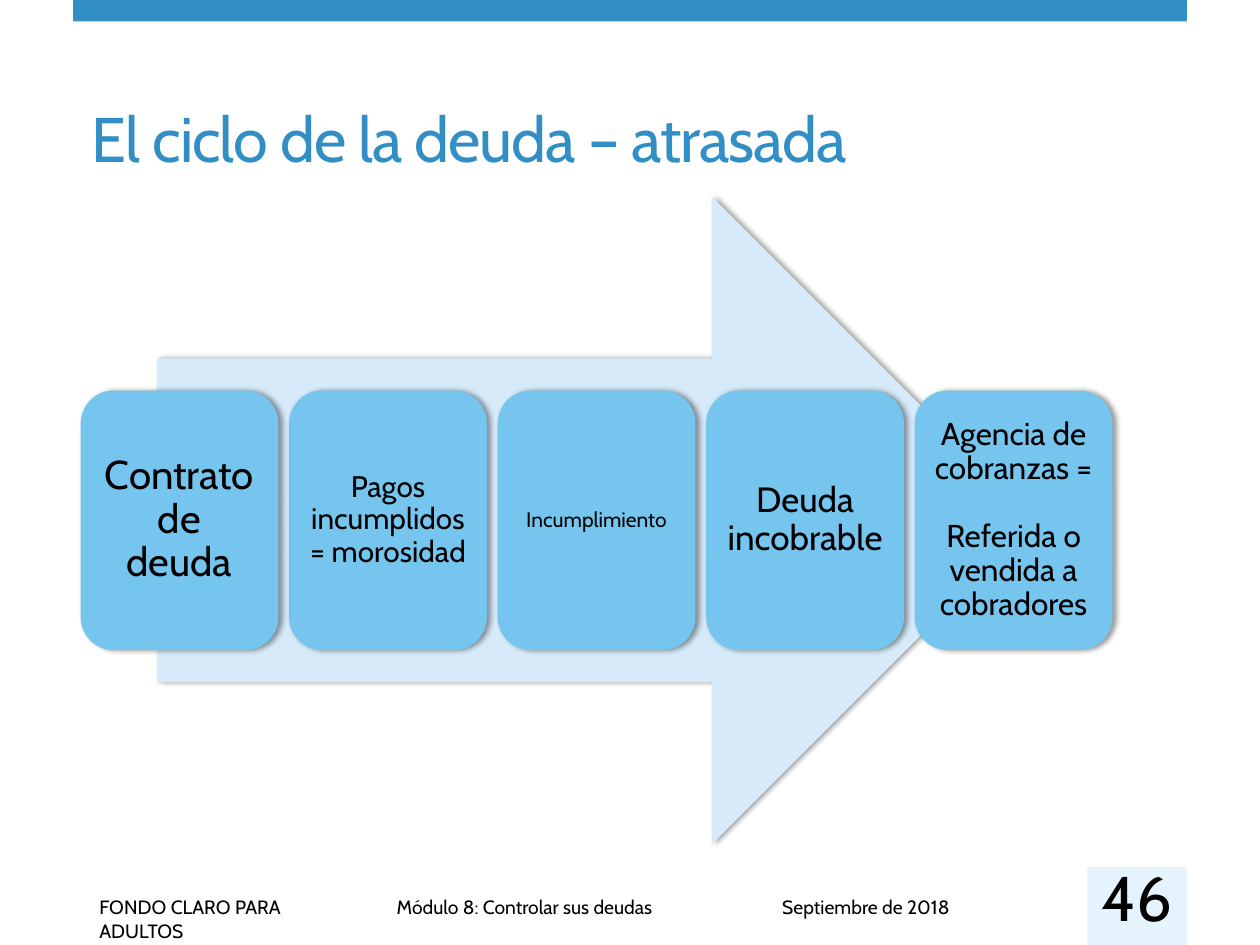
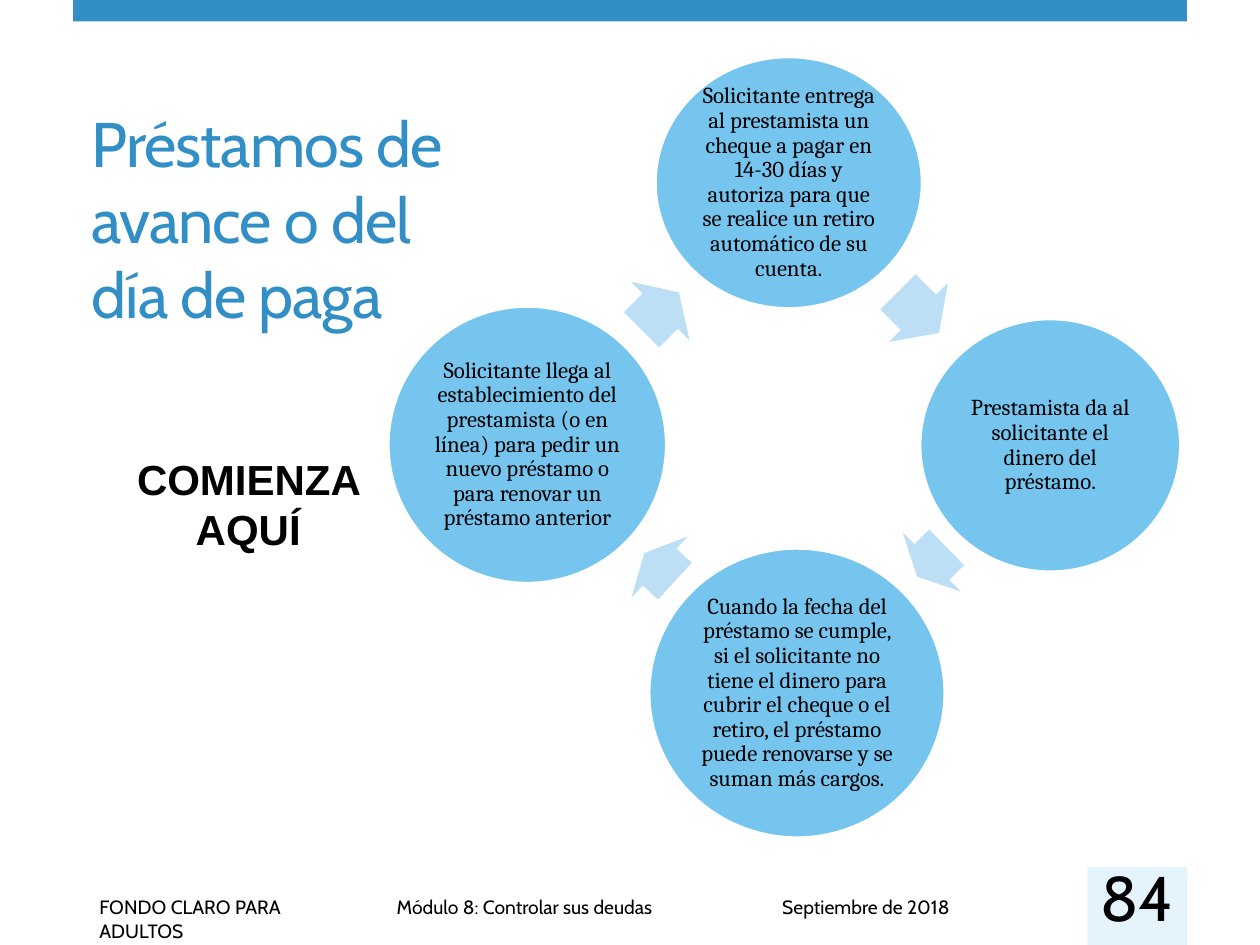
import pptx
import pptx.util
import pptx.dml.color
import pptx.enum.shapes
import pptx.enum.text
import pptx.oxml
import pptx.oxml.ns
from dataclasses import dataclass

Inches = pptx.util.Inches
Pt = pptx.util.Pt
Kind = pptx.enum.shapes.MSO_SHAPE
Align = pptx.enum.text.PP_ALIGN
Anchor = pptx.enum.text.MSO_ANCHOR


@dataclass(frozen=True)
class Theme:
    blue: str = "318FC5"
    sky: str = "76C5EF"
    pale: str = "D6EAF9"
    ice: str = "E4F3FC"
    mist: str = "BDDFF6"
    white: str = "FFFFFF"
    black: str = "000000"
    font: str = "Cabin"
    serif: str = "Cambria"
    sans: str = "Arial"
    title: int = 36
    start: int = 24
    note: int = 13
    foot: int = 11


SHADE = (
    '<a:effectLst xmlns:a="http://schemas.openxmlformats.org/drawingml/2006/main">'
    '<a:outerShdw blurRad="39370" dist="22860" dir="0" rotWithShape="0">'
    '<a:srgbClr val="000000"><a:alpha val="40000"/></a:srgbClr>'
    '</a:outerShdw></a:effectLst>'
)


def tint(code):
    return pptx.dml.color.RGBColor.from_string(code)


def put(shape, text, size, font=Theme.font, color=Theme.black, bold=False,
        align=Align.LEFT, anchor=Anchor.TOP, inset=None, lead=None, gap=0, track=None):
    frame = shape.text_frame
    frame.word_wrap = True
    frame.vertical_anchor = anchor
    if inset is not None:
        frame.margin_left = frame.margin_right = Inches(inset)
        frame.margin_top = frame.margin_bottom = Inches(inset)
    lines = text.split("\n")
    for i, line in enumerate(lines):
        para = frame.add_paragraph() if i else frame.paragraphs[0]
        para.alignment = align
        if lead:
            para.line_spacing = lead
        if i < len(lines) - 1:
            para.space_after = Pt(gap)
        run = para.add_run()
        run.text = line
        run.font.size = Pt(size)
        run.font.name = font
        run.font.bold = bold
        run.font.color.rgb = tint(color)
        if track:
            run.font._element.set("spc", str(track))


class Deck:
    def __init__(self, theme):
        self.theme = theme
        self.show = pptx.Presentation()
        self.show.slide_width = Inches(10)
        self.show.slide_height = Inches(7.5)
        self.slide = None

    def shape(self, kind, box, fill, edge=None, shade=False, turn=0):
        item = self.slide.shapes.add_shape(kind, *map(Inches, box))
        item.fill.solid()
        item.fill.fore_color.rgb = tint(fill)
        if edge:
            item.line.color.rgb = tint(edge)
            item.line.width = Pt(3.25)
        else:
            item.line.fill.background()
        item.shadow.inherit = False
        if shade:
            props = item._element.spPr
            props.remove(props.find(pptx.oxml.ns.qn("a:effectLst")))
            props.append(pptx.oxml.parse_xml(SHADE))
        item.rotation = turn
        return item

    def text(self, box, words, size, **style):
        put(self.slide.shapes.add_textbox(*map(Inches, box)), words, size, **style)

    def page(self, title, box, number):
        look = self.theme
        self.slide = self.show.slides.add_slide(self.show.slide_layouts[6])
        self.shape(Kind.RECTANGLE, (0.58, 0, 8.84, 0.17), look.blue)
        self.shape(Kind.RECTANGLE, (8.63, 6.88, 0.79, 0.62), look.ice)
        for left, wide, words in (
            (0.69, 2.23, "FONDO CLARO PARA ADULTOS"),
            (3.05, 3, "Módulo 8: Controlar sus deudas"),
            (6.11, 2.52, "Septiembre de 2018"),
        ):
            self.text((left, 7.06, wide, 0.29), words, look.foot)
        self.text((8.63, 6.96, 0.79, 0.31), number, look.title,
                  align=Align.CENTER, anchor=Anchor.MIDDLE, inset=0)
        self.text(box, title, look.title, color=look.blue,
                  anchor=Anchor.BOTTOM, track=-60)

    def card(self, left, words, size, inset):
        item = self.shape(Kind.ROUNDED_RECTANGLE, (left, 3.1, 1.57, 2.06),
                          self.theme.sky, shade=True)
        put(item, words, size, align=Align.CENTER, anchor=Anchor.MIDDLE,
            inset=inset, lead=0.9, gap=19.5)

    def disc(self, box, words):
        look = self.theme
        item = self.shape(Kind.OVAL, box, look.sky, edge=look.white)
        put(item, words, look.note, font=look.serif, align=Align.CENTER,
            anchor=Anchor.MIDDLE, inset=0.02, lead=0.9)

    def arrow(self, box, turn):
        item = self.shape(Kind.RIGHT_ARROW, box, self.theme.mist, turn=turn)
        item.adjustments[0] = 0.6
        item.adjustments[1] = 0.5


def debt(deck):
    deck.page("El ciclo de la deuda – atrasada", (0.63, 0.48, 8.2, 0.96), "46")
    deck.shape(Kind.RIGHT_ARROW, (1.25, 1.56, 6.97, 5.14), deck.theme.pale, shade=True)
    steps = (
        ("Contrato de deuda", 23, 0.1),
        ("Pagos incumplidos = morosidad", 17, 0.07),
        ("Incumplimiento", 12, 0.05),
        ("Deuda incobrable", 20, 0.08),
        ("Agencia de cobranzas =\nReferida o vendida a cobradores", 18, 0.07),
    )
    for i, step in enumerate(steps):
        deck.card(0.64 + 1.655 * i, *step)


def loan(deck):
    look = deck.theme
    deck.page("Préstamos de avance o del día de paga", (0.63, 0.78, 3.32, 1.9), "84")
    start = deck.shape(Kind.RECTANGLE, (0.96, 3.55, 2.02, 1.21), look.white)
    put(start, "COMIENZA AQUÍ", look.start, font=look.sans, bold=True, align=Align.CENTER)
    stages = (
        ((5.19, 0.44, 2.14, 2.02),
         "Solicitante entrega al prestamista un cheque a pagar en 14-30 días y "
         "autoriza para que se realice un retiro automático de su cuenta.",
         (7.06, 2.15, 0.46, 0.66), 45),
        ((7.29, 2.52, 2.09, 2.03),
         "Prestamista da al solicitante el dinero del préstamo.",
         (7.23, 4.13, 0.33, 0.66), 135.6),
        ((5.14, 4.34, 2.37, 2.32),
         "Cuando la fecha del préstamo se cumple, si el solicitante no tiene el "
         "dinero para cubrir el cheque o el retiro, el préstamo puede renovarse "
         "y se suman más cargos.",
         (5.07, 4.17, 0.33, 0.66), 222.6),
        ((3.07, 2.42, 2.23, 2.22),
         "Solicitante llega al establecimiento del prestamista (o en línea) para "
         "pedir un nuevo préstamo o para renovar un préstamo anterior",
         (5.03, 2.14, 0.42, 0.66), 315),
    )
    for box, words, spot, turn in stages:
        deck.disc(box, words)
        deck.arrow(spot, turn)


def main():
    deck = Deck(Theme())
    debt(deck)
    loan(deck)
    deck.show.save("out.pptx")


if __name__ == "__main__":
    main()
